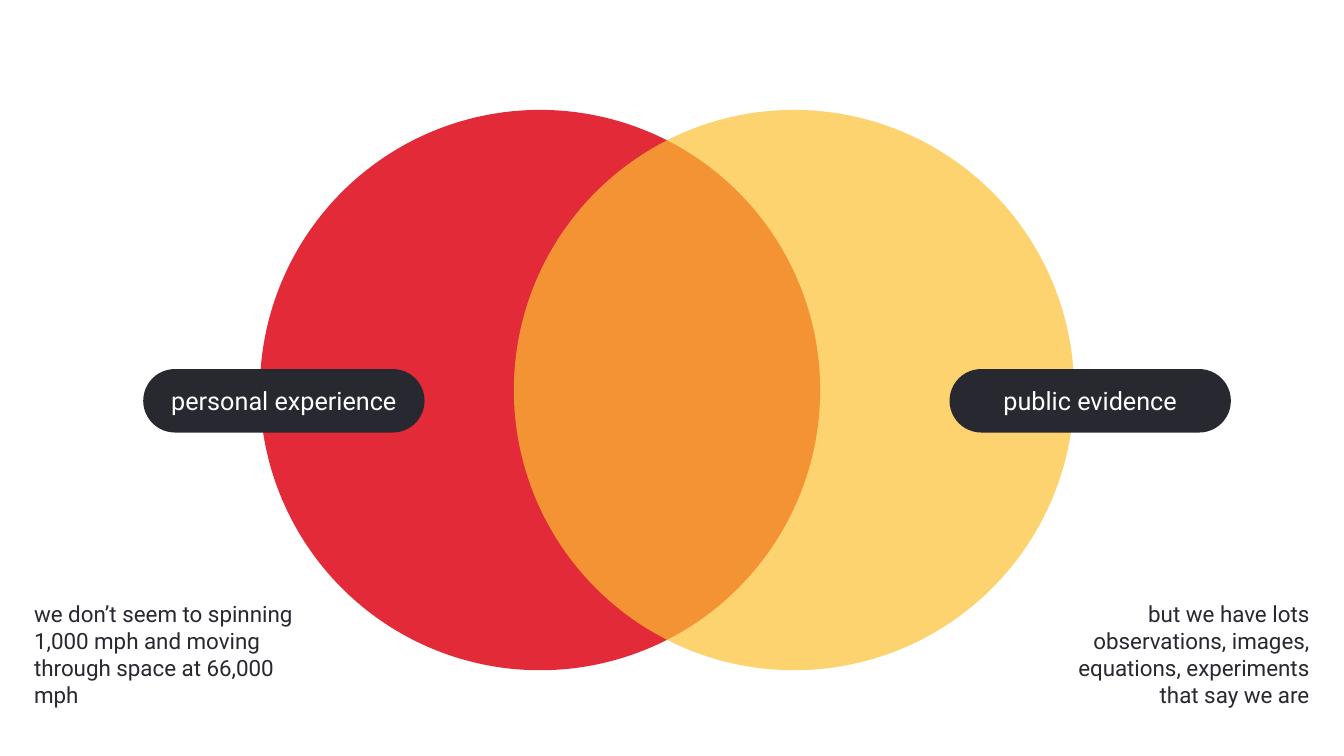
from lxml import etree
from pptx import Presentation
from pptx.dml.color import RGBColor
from pptx.enum.shapes import MSO_SHAPE
from pptx.enum.text import MSO_ANCHOR, PP_ALIGN
from pptx.oxml.ns import qn
from pptx.util import Cm, Pt

OVAL = MSO_SHAPE.OVAL
PILL = MSO_SHAPE.ROUNDED_RECTANGLE
MIDDLE = MSO_ANCHOR.MIDDLE
LEFT, CENTER, RIGHT = PP_ALIGN.LEFT, PP_ALIGN.CENTER, PP_ALIGN.RIGHT

COLORS = {"red": "E22A38", "gold": "FCC133", "dark": "282830", "white": "FFFFFF"}
FONT = "Roboto"


def add_form(kind, left, top, width, height, color):
    form = slide.shapes.add_shape(kind, Cm(left), Cm(top), Cm(width), Cm(height))
    form.shadow.inherit = False
    form.fill.solid()
    form.fill.fore_color.rgb = RGBColor.from_string(COLORS[color])
    form.line.fill.background()
    return form


def put_text(shape, text, size=16, color="dark", align=LEFT):
    frame = shape.text_frame
    frame.word_wrap = True
    frame.vertical_anchor = MIDDLE
    para = frame.paragraphs[0]
    para.alignment = align
    run = para.add_run()
    run.text = text
    run.font.name = FONT
    run.font.size = Pt(size)
    run.font.color.rgb = RGBColor.from_string(COLORS[color])


prs = Presentation()
prs.slide_width, prs.slide_height = Cm(33.87), Cm(19.05)
slide = prs.slides.add_slide(prs.slide_layouts[6])

# Two overlapping circles, the front one see-through
size = 14.12
add_form(OVAL, 6.55, 2.77, size, size, "red")
front = add_form(OVAL, 12.95, 2.77, size, size, "gold")
tint = front.fill._xPr.find(qn("a:solidFill"))[0]
etree.SubElement(tint, qn("a:alpha"), val="70000")

# Dark labels on the outer edges
width = 7.09
for left, label in ((3.61, "personal experience"), (23.93, "public evidence")):
    pill = add_form(PILL, left, 9.3, width, 1.6, "dark")
    pill.adjustments[0] = 0.5
    put_text(pill, label, size=18, color="white", align=CENTER)

# Notes in the lower corners
notes = (
    (0.61, LEFT, "we don’t seem to spinning 1,000 mph and moving through space at 66,000 mph"),
    (26.16, RIGHT, "but we have lots observations, images, equations, experiments that say we are"),
)
for left, align, text in notes:
    box = slide.shapes.add_textbox(Cm(left), Cm(14.48), Cm(width), Cm(4.01))
    put_text(box, text, align=align)

prs.save("out.pptx")
